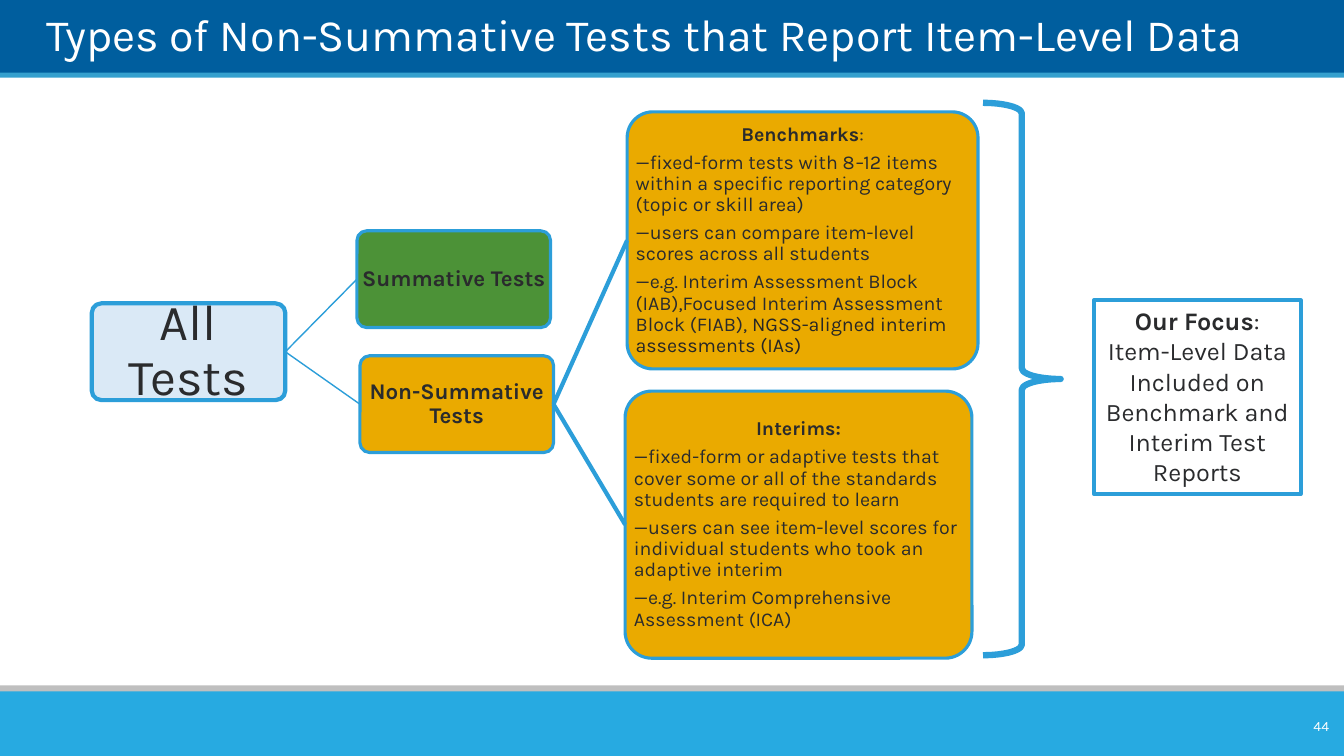
"""Build the slide that sorts tests into types and names the focus."""
from lxml import etree
from pptx import Presentation
from pptx import util as u
from pptx.dml.color import RGBColor
from pptx.enum import shapes, text
from pptx.oxml.ns import qn

PX = 9144
WIDE, HIGH = 1333, 750
FONT = "Karla"
NAVY = RGBColor(0x00, 0x5E, 0x9E)
TEAL = RGBColor(0x35, 0xA0, 0xCE)
GREY = RGBColor(0xBF, 0xBF, 0xBF)
SKY = RGBColor(0x27, 0xAA, 0xE1)
EDGE = RGBColor(0x2C, 0x9E, 0xD9)
PALE = RGBColor(0xDA, 0xE9, 0xF6)
GOLD = RGBColor(0xEA, 0xAA, 0x00)
GREEN = RGBColor(0x4C, 0x92, 0x37)
INK = RGBColor(0x2A, 0x2B, 0x2D)
COAL = RGBColor(0x26, 0x26, 0x26)
WHITE = RGBColor(0xFF, 0xFF, 0xFF)
LEFT, MID, RIGHT = text.PP_ALIGN.LEFT, text.PP_ALIGN.CENTER, text.PP_ALIGN.RIGHT
KIND = shapes.MSO_SHAPE

BENCH = [
    [("Benchmarks", {"bold": True}), (":", {})],
    [("—fixed-form tests with 8", {}), ("–", {"italic": True}),
     ("12 items within a specific reporting category (topic or skill area)", {})],
    [("—users can compare item-level scores across all students", {})],
    [("—e.g. Interim Assessment Block (IAB),Focused Interim Assessment Block (FIAB), ", {}),
     ("NGSS-aligned interim assessments (IAs)", {"color": COAL})],
]
INTERIM = [
    [("Interims:", {"bold": True})],
    [("—fixed-form or adaptive tests that cover some or all of the standards "
      "students are required to learn", {})],
    [("—users can see item-level scores for individual students who took an "
      "adaptive interim", {})],
    [("—e.g. Interim Comprehensive Assessment (ICA)", {})],
]
FOCUS = [
    [("Our Focus", {"bold": True}), (":", {})],
    [("Item-Level Data Included on Benchmark and Interim Test Reports", {})],
]


def scale(box):
    """Turn a box in px into EMU."""
    return [u.Emu(n * PX) for n in box]


def write(frame, paras, size, color=INK, align=MID, rest=None):
    """Fill a frame run by run; paragraphs after the first may align otherwise."""
    frame.word_wrap = True
    for i, runs in enumerate(paras):
        para = frame.paragraphs[0] if i == 0 else frame.add_paragraph()
        para.alignment = rest if i and rest else align
        for words, look in runs:
            run = para.add_run()
            run.text = words
            run.font.name = FONT
            run.font.size = u.Pt(size)
            run.font.bold = look.get("bold", False)
            run.font.italic = look.get("italic", False)
            run.font.color.rgb = look.get("color", color)


def draw(slide, kind, box, fill=None, line=None):
    """Add a flat preset shape with an optional fill and edge."""
    shape = slide.shapes.add_shape(kind, *scale(box))
    shape.shadow.inherit = False
    if fill is None:
        shape.fill.background()
    else:
        shape.fill.solid()
        shape.fill.fore_color.rgb = fill
    if line is None:
        shape.line.fill.background()
    else:
        shape.line.color.rgb = EDGE
        shape.line.width = u.Pt(line)
    return shape


def add_node(slide, box, fill, paras, size, line=2.25, pad=1):
    """Add a rounded box of the tree with its text."""
    node = draw(slide, KIND.ROUNDED_RECTANGLE, box, fill, line)
    node.adjustments[0] = 0.1
    frame = node.text_frame
    frame.margin_left = frame.margin_right = u.Emu(pad * PX)
    frame.margin_top = frame.margin_bottom = u.Emu(pad * PX)
    frame.vertical_anchor = text.MSO_ANCHOR.MIDDLE
    write(frame, paras, size, rest=LEFT)
    for para in frame.paragraphs:
        para.line_spacing = 0.9
        para.space_after = u.Pt(round(size * 0.35, 1))
    return node


def join(slide, start, end, width):
    """Link the right side of one node to the left side of another."""
    link = slide.shapes.add_connector(shapes.MSO_CONNECTOR.STRAIGHT, 0, 0, 0, 0)
    link.begin_connect(start, 3)
    link.end_connect(end, 1)
    link.line.color.rgb = EDGE
    link.line.width = u.Pt(width)
    etree.SubElement(link._element.spPr, qn("a:effectLst"))


def add_head(slide, box):
    """Place the header bands and the title over them."""
    x, y, w, h = box
    draw(slide, KIND.RECTANGLE, (x, y, w, h - 3), NAVY)
    draw(slide, KIND.RECTANGLE, (x, y + h - 5, w, 5), TEAL)
    title = slide.shapes.title
    title.left, title.top, title.width, title.height = scale((x + 36, y + 3, 1227, 80))
    slide.shapes._spTree.append(title._element)
    frame = title.text_frame
    frame.auto_size = text.MSO_AUTO_SIZE.NONE
    frame.vertical_anchor = text.MSO_ANCHOR.TOP
    words = "Types of Non-Summative Tests that Report Item-Level Data"
    write(frame, [[(words, {})]], 32, WHITE, LEFT)


def add_foot(slide, box):
    """Place the footer bands and the page number."""
    x, y, w, h = box
    draw(slide, KIND.RECTANGLE, (x, y, w, 14), GREY)
    draw(slide, KIND.RECTANGLE, (x, y + 6, w, h - 6), SKY)
    page = slide.shapes.add_textbox(*scale((x + w - 82, y + 25, 77, 30)))
    page.text_frame.vertical_anchor = text.MSO_ANCHOR.MIDDLE
    write(page.text_frame, [[("44", {})]], 10, WHITE, RIGHT)


def add_tree(slide, box):
    """Place the tree of test types and its links."""
    x, y, w, h = box
    strong = {"bold": True}
    root = add_node(slide, (x, y + 190, 192, 96), PALE, [[("All Tests", {})]], 36, 3, 3)
    summ = add_node(slide, (x + 263, y + 118, 192, 96), GREEN,
                    [[("Summative Tests", strong)]], 16)
    non = add_node(slide, (x + 266, y + 242, 192, 96), GOLD,
                   [[("Non-Summative Tests", strong)]], 16)
    bench = add_node(slide, (x + w - 348, y, 348, 255), GOLD, BENCH, 14)
    inter = add_node(slide, (x + w - 350, y + h - 265, 344, 265), GOLD, INTERIM, 14)
    for start, end, width in ((root, summ, 1), (root, non, 1),
                              (non, bench, 3), (non, inter, 3)):
        join(slide, start, end, width)


def add_focus(slide, box):
    """Place the brace and the focus box beside it."""
    x, y, w, h = box
    brace = draw(slide, KIND.RIGHT_BRACE, (x, y, 77, h), line=4.5)
    brace.adjustments[0] = 0.137
    brace.adjustments[1] = 0.5
    note = draw(slide, KIND.RECTANGLE, (x + w - 205, y + 196, 205, 192), line=3)
    note.text_frame.vertical_anchor = text.MSO_ANCHOR.TOP
    write(note.text_frame, FOCUS, 18)


def main():
    """Build and save the slide."""
    deck = Presentation()
    deck.slide_width, deck.slide_height = scale((WIDE, HIGH))
    slide = deck.slides.add_slide(deck.slide_layouts[5])
    add_head(slide, (0, -1, WIDE, 78))
    add_foot(slide, (0, 680, WIDE, 70))
    add_tree(slide, (91, 111, 879, 542))
    add_focus(slide, (975, 102, 315, 548))
    deck.save("out.pptx")


if __name__ == "__main__":
    main()
